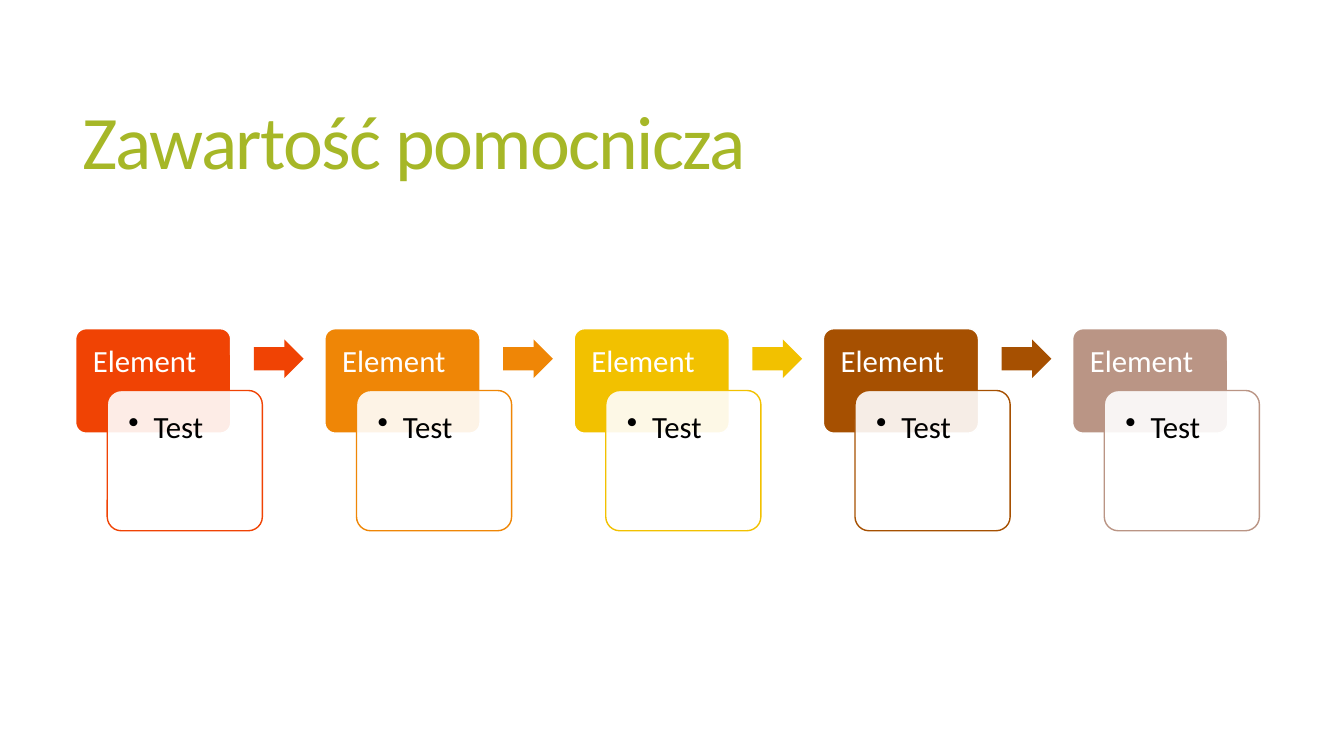
"""Builds a slide with a five-step process of overlapping cards joined by arrows."""
from lxml import etree
from pptx import Presentation
from pptx import util as u
from pptx.dml.color import RGBColor
from pptx.enum import shapes, text
from pptx.oxml.ns import qn

TITLE = "Zawartość pomocnicza"
STEPS = [
    ("Element", "Test", "F04304"),
    ("Element", "Test", "EF8606"),
    ("Element", "Test", "F2C100"),
    ("Element", "Test", "A65001"),
    ("Element", "Test", "BA9585"),
]
THEME = {
    "font": "Calibri", "title_size": 54, "body_size": 22, "line": 1,
    "title": "A6B727", "light": "FFFFFF", "dark": "000000",
}
PITCH = 178.04
HEAD = (54, 234.8, 110.8, 74.6)
HEAD_TEXT = (54, 234.8, 110.8, 44.6)
CARD = (76.6, 278.9, 110.8, 100.2)
CARD_TEXT = (79.5, 282, 105, 94)
ARROW = (181.4, 242.5, 35.5, 27.6)
KIND = shapes.MSO_SHAPE


def rgb(value):
    return RGBColor.from_string(value)


def shifted(box, dx):
    return [u.Pt(v) for v in (box[0] + dx, *box[1:])]


def add_shape(s, kind, box, dx, fill, line=None, adj=(0.1,), alpha=None):
    sp = s.shapes.add_shape(kind, *shifted(box, dx))
    sp.shadow.inherit = False
    for i, value in enumerate(adj):
        sp.adjustments[i] = value
    sp.fill.solid()
    sp.fill.fore_color.rgb = rgb(fill)
    if alpha:
        color = sp.fill._xPr.find(qn("a:solidFill"))[0]
        etree.SubElement(color, qn("a:alpha"), val=str(alpha * 1000))
    if line:
        sp.line.color.rgb = rgb(line)
        sp.line.width = u.Pt(THEME["line"])
    else:
        sp.line.fill.background()


def add_text(s, box, dx, words, size, color, spacing=0.9, insets=(12.3, 12.3, 12.3, 12.3),
             anchor=text.MSO_ANCHOR.TOP):
    tf = s.shapes.add_textbox(*shifted(box, dx)).text_frame
    sides = ("margin_left", "margin_top", "margin_right", "margin_bottom")
    fmt = dict(zip(sides, map(u.Pt, insets)), word_wrap=True, vertical_anchor=anchor)
    for name, value in fmt.items():
        setattr(tf, name, value)
    p = tf.paragraphs[0]
    p.line_spacing = spacing
    r = p.add_run()
    r.text = words
    for name, value in {"name": THEME["font"], "size": u.Pt(size)}.items():
        setattr(r.font, name, value)
    r.font.color.rgb = rgb(color)
    return p


def add_bullet(p, indent):
    p.level = 1
    pPr = p._p.get_or_add_pPr()
    pPr.set("marL", str(u.Pt(indent)))
    pPr.set("indent", str(-u.Pt(indent)))
    etree.SubElement(pPr, qn("a:buChar"), char="•")


def main():
    prs = Presentation()
    prs.slide_width, prs.slide_height = u.Pt(960), u.Pt(540)
    s = prs.slides.add_slide(prs.slide_layouts[6])
    p = add_text(s, (51.8, 39.6, 848.2, 130.3), 0, TITLE, THEME["title_size"], THEME["title"],
                 0.85, (7.2, 3.6, 7.2, 3.6), text.MSO_ANCHOR.MIDDLE)
    p.runs[0].font._element.set("spc", "-120")

    for i, (head, body, color) in enumerate(STEPS):
        dx = i * PITCH
        add_shape(s, KIND.ROUNDED_RECTANGLE, HEAD, dx, color, THEME["light"])
        add_text(s, HEAD_TEXT, dx, head, THEME["body_size"], THEME["light"],
                 insets=(12.3, 12.3, 12.3, 6.6))
        add_shape(s, KIND.ROUNDED_RECTANGLE, CARD, dx, THEME["light"], color, alpha=90)
        add_bullet(add_text(s, CARD_TEXT, dx, body, THEME["body_size"], THEME["dark"]), 18)
        if i < len(STEPS) - 1:
            add_shape(s, KIND.RIGHT_ARROW, ARROW, dx, color, adj=(0.6, 0.5))
    prs.save("out.pptx")


if __name__ == "__main__":
    main()
